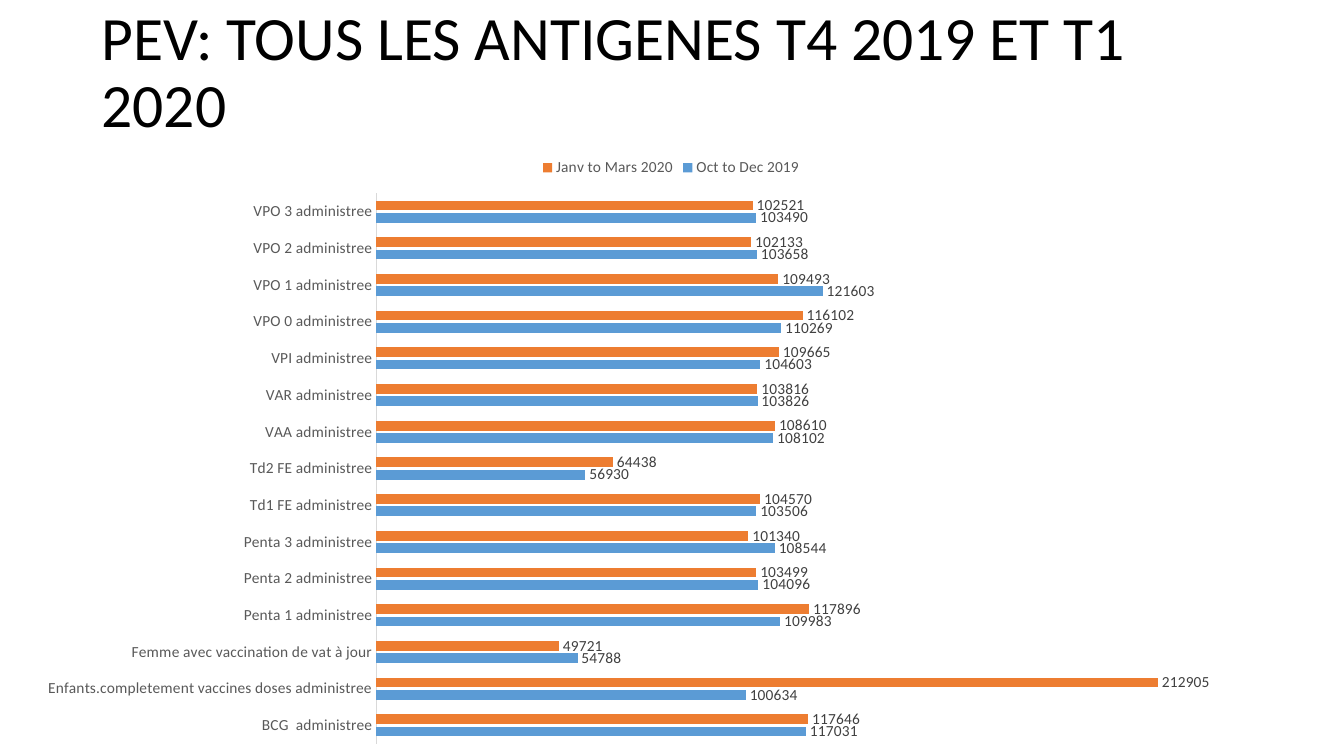
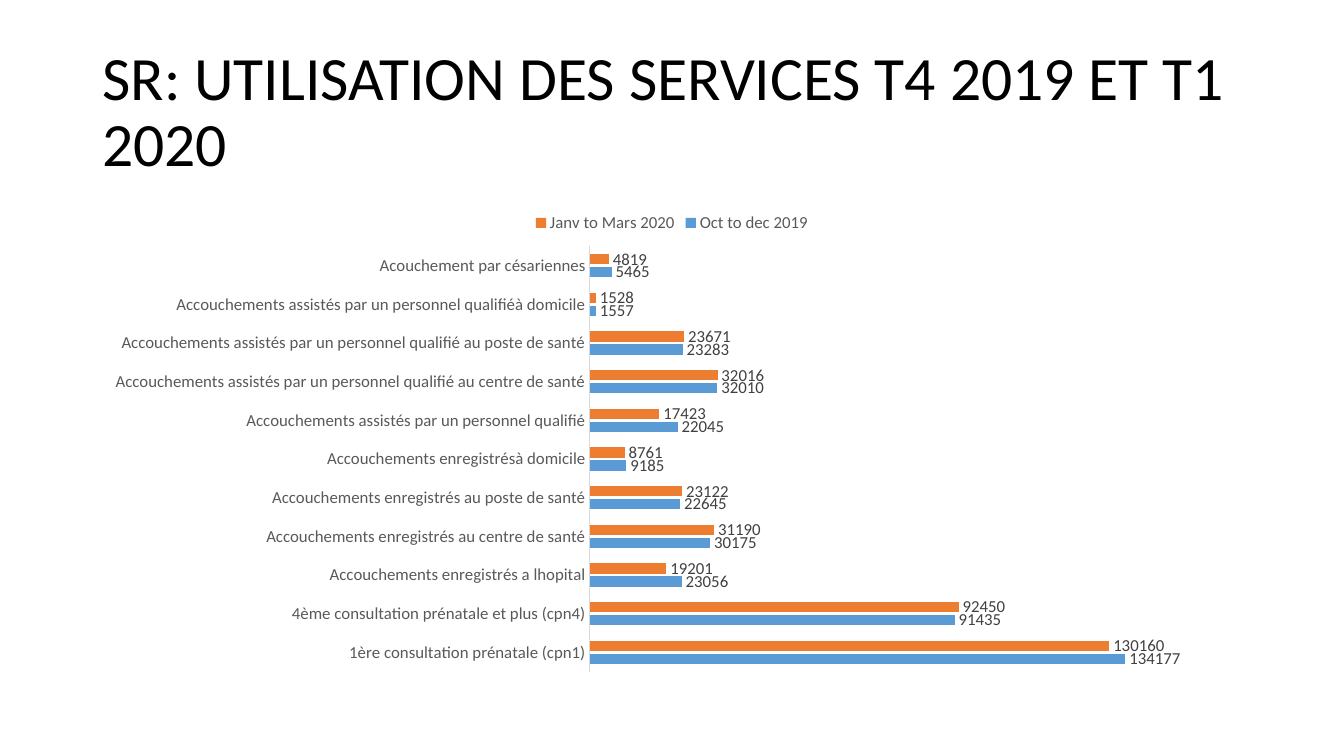
from dataclasses import dataclass

from pptx import Presentation
from pptx.chart.data import CategoryChartData
from pptx.dml.color import RGBColor
from pptx.enum.chart import XL_CHART_TYPE, XL_LABEL_POSITION, XL_LEGEND_POSITION, XL_TICK_MARK
from pptx.enum.text import MSO_ANCHOR
from pptx.util import Inches, Pt

BAR_CLUSTERED = XL_CHART_TYPE.BAR_CLUSTERED
LEGEND_TOP = XL_LEGEND_POSITION.TOP
OUTSIDE_END = XL_LABEL_POSITION.OUTSIDE_END
NO_TICK = XL_TICK_MARK.NONE
MIDDLE = MSO_ANCHOR.MIDDLE

SLIDE_WIDTH, SLIDE_HEIGHT = Inches(13.33), Inches(7.5)
COLUMNS, ROWS = 32, 18
FONT = "Calibri"
TITLE_SIZE = 44
COLORS = {
    "background": "FFFFFF",
    "title": "000000",
    "axis_text": "595959",
    "axis_line": "D9D9D9",
    "value": "404040",
    "last_quarter": "5B9BD5",
    "first_quarter": "ED7D31",
}
PERIOD_COLORS = ("last_quarter", "first_quarter")


@dataclass(frozen=True)
class Area:
    """A rectangle in grid columns and rows."""

    column: float
    row: float
    columns: float
    rows: float

    def box(self) -> tuple[int, int, int, int]:
        """Return left, top, width and height in EMU."""
        across, down = SLIDE_WIDTH / COLUMNS, SLIDE_HEIGHT / ROWS
        return (round(self.column * across), round(self.row * down),
                round(self.columns * across), round(self.rows * down))


@dataclass(frozen=True)
class Comparison:
    """One slide comparing two quarters; each count row holds both periods."""

    title: str
    title_area: Area
    chart_area: Area
    text_size: int
    periods: tuple[str, str]
    counts: dict[str, tuple[int, int]]


VACCINATION = Comparison(
    title="PEV: TOUS LES ANTIGENES T4 2019 ET T1 2020",
    title_area=Area(2.18, 0.02, 27.6, 3.48),
    chart_area=Area(0.53, 3.5, 30.9, 14.5),
    text_size=11,
    periods=("Oct to Dec 2019", "Janv to Mars 2020"),
    counts={
        "BCG  administree": (117031, 117646),
        "Enfants.completement vaccines doses administree": (100634, 212905),
        "Femme avec vaccination de vat à jour": (54788, 49721),
        "Penta 1 administree": (109983, 117896),
        "Penta 2 administree": (104096, 103499),
        "Penta 3 administree": (108544, 101340),
        "Td1 FE administree": (103506, 104570),
        "Td2 FE administree": (56930, 64438),
        "VAA administree": (108102, 108610),
        "VAR administree": (103826, 103816),
        "VPI administree": (104603, 109665),
        "VPO 0 administree": (110269, 116102),
        "VPO 1 administree": (121603, 109493),
        "VPO 2 administree": (103658, 102133),
        "VPO 3 administree": (103490, 102521),
    },
)

MATERNITY = Comparison(
    title="SR: UTILISATION DES SERVICES T4 2019 ET T1 2020",
    title_area=Area(2.2, 0.96, 27.6, 3.48),
    chart_area=Area(2.2, 4.8, 27.6, 11.42),
    text_size=12,
    periods=("Oct to dec 2019", "Janv to Mars 2020"),
    counts={
        "1ère consultation prénatale (cpn1)": (134177, 130160),
        "4ème consultation prénatale et plus (cpn4)": (91435, 92450),
        "Accouchements enregistrés a lhopital": (23056, 19201),
        "Accouchements enregistrés au centre de santé": (30175, 31190),
        "Accouchements enregistrés au poste de santé": (22645, 23122),
        "Accouchements enregistrésà domicile": (9185, 8761),
        "Accouchements assistés par un personnel qualifié": (22045, 17423),
        "Accouchements assistés par un personnel qualifié au centre de santé": (32010, 32016),
        "Accouchements assistés par un personnel qualifié au poste de santé": (23283, 23671),
        "Accouchements assistés par un personnel qualifiéà domicile": (1557, 1528),
        "Acouchement par césariennes": (5465, 4819),
    },
)


def color(name: str) -> RGBColor:
    """Look up a shared colour."""
    return RGBColor.from_string(COLORS[name])


def style_font(font, size: int, color_name: str) -> None:
    """Apply the shared typeface with a size and colour."""
    font.name = FONT
    font.size = Pt(size)
    font.bold = False
    font.color.rgb = color(color_name)


def add_title(slide, text: str, area: Area) -> None:
    """Write the slide title, centred vertically in its area."""
    frame = slide.shapes.add_textbox(*area.box()).text_frame
    frame.word_wrap = True
    frame.vertical_anchor = MIDDLE
    paragraph = frame.paragraphs[0]
    paragraph.line_spacing = 0.9
    run = paragraph.add_run()
    run.text = text
    style_font(run.font, TITLE_SIZE, "title")


def add_comparison_chart(slide, comparison: Comparison) -> None:
    """Draw paired bars for the two quarters."""
    data = CategoryChartData()
    data.categories = list(comparison.counts)
    for period, values in zip(comparison.periods, zip(*comparison.counts.values())):
        data.add_series(period, values)
    chart = slide.shapes.add_chart(BAR_CLUSTERED, *comparison.chart_area.box(), data).chart
    size = comparison.text_size
    style_font(chart.font, size, "title")
    chart.has_title = False

    chart.has_legend = True
    chart.legend.position = LEGEND_TOP
    chart.legend.include_in_layout = False
    style_font(chart.legend.font, size, "axis_text")

    services = chart.category_axis
    services.major_tick_mark = services.minor_tick_mark = NO_TICK
    services.format.line.color.rgb = color("axis_line")
    services.format.line.width = Pt(0.75)
    style_font(services.tick_labels.font, size, "axis_text")
    chart.value_axis.visible = False
    chart.value_axis.has_major_gridlines = False

    plot = chart.plots[0]
    plot.vary_by_categories = False
    plot.gap_width = 150
    plot.overlap = -25
    for series, color_name in zip(plot.series, PERIOD_COLORS):
        series.format.fill.solid()
        series.format.fill.fore_color.rgb = color(color_name)
        labels = series.data_labels
        labels.show_value = True
        labels.position = OUTSIDE_END
        style_font(labels.font, size, "value")


def main() -> None:
    """Build and save the presentation."""
    presentation = Presentation()
    presentation.slide_width, presentation.slide_height = SLIDE_WIDTH, SLIDE_HEIGHT
    blank = presentation.slide_layouts[6]
    for comparison in (VACCINATION, MATERNITY):
        slide = presentation.slides.add_slide(blank)
        slide.background.fill.solid()
        slide.background.fill.fore_color.rgb = color("background")
        add_title(slide, comparison.title, comparison.title_area)
        add_comparison_chart(slide, comparison)
    presentation.save("out.pptx")


if __name__ == "__main__":
    main()
